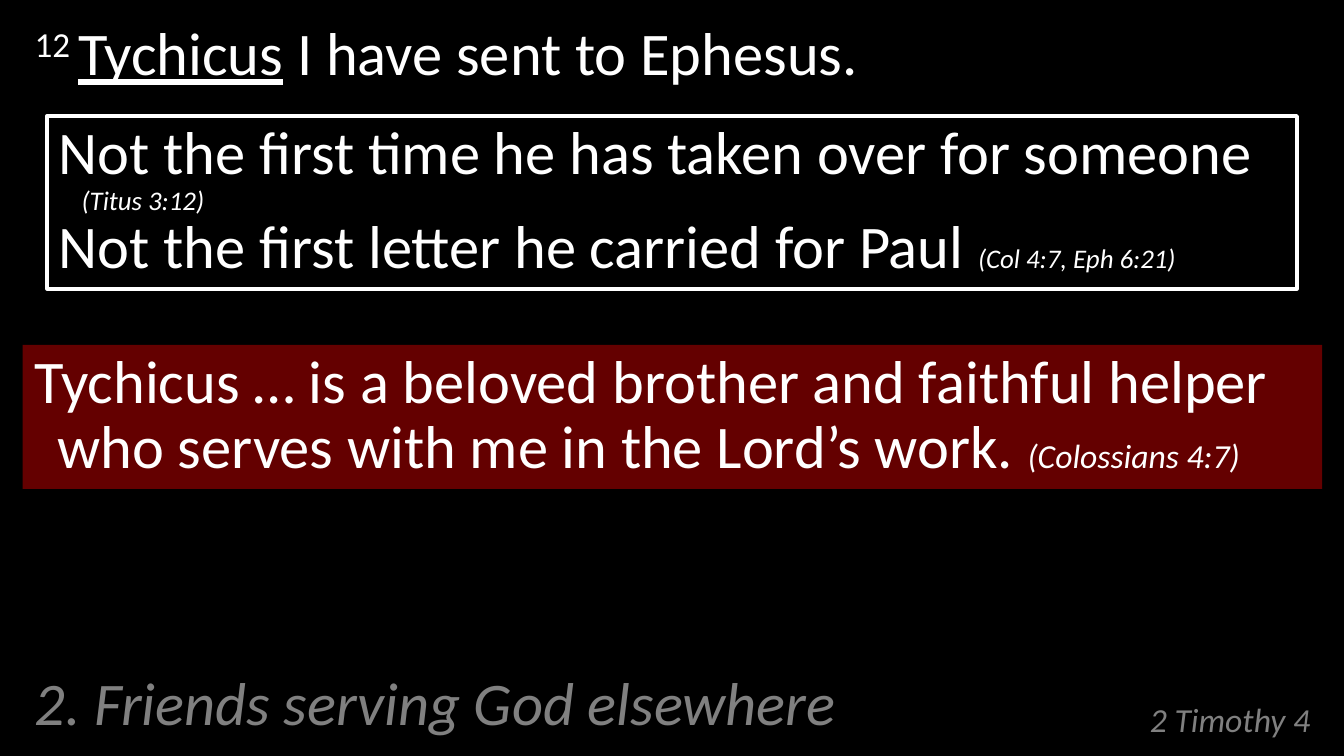
from pptx import Presentation
from pptx.dml.color import RGBColor
from pptx.enum.shapes import MSO_SHAPE
from pptx.enum.text import MSO_ANCHOR, MSO_AUTO_SIZE, PP_ALIGN
from pptx.util import Pt

ROUNDED = MSO_SHAPE.ROUNDED_RECTANGLE
TOP, BOTTOM = MSO_ANCHOR.TOP, MSO_ANCHOR.BOTTOM
LEFT, RIGHT = PP_ALIGN.LEFT, PP_ALIGN.RIGHT
GROW = MSO_AUTO_SIZE.SHAPE_TO_FIT_TEXT
COLORS = {"black": "000000", "white": "FFFFFF", "gray": "808080", "maroon": "640000"}


def rgb(name):
    return RGBColor.from_string(COLORS[name])


def write(p, parts, color, spacing, indent=0, align=LEFT):
    p.alignment = align
    p.line_spacing = spacing
    pPr = p._p.get_or_add_pPr()
    pPr.set("marL", str(Pt(indent)))
    pPr.set("indent", str(Pt(-indent)))
    p.text = parts[0][0]
    for text, size, style in parts[1:]:
        p.add_run().text = text
    sizes = [(size, style) for text, size, style in parts for line in text.split("\v")]
    for r, (size, style) in zip(p.runs, sizes):
        r.font.name = "Calibri"
        r.font.size = Pt(size)
        r.font.color.rgb = rgb(color)
        r.font.italic = style == "italic"
        r.font.underline = style == "underline"
        if style == "super":
            r._r.get_or_add_rPr().set("baseline", "30000")


prs = Presentation()
prs.slide_width, prs.slide_height = Pt(800), Pt(450)
s = prs.slides.add_slide(prs.slide_layouts[6])
s.background.fill.solid()
s.background.fill.fore_color.rgb = rgb("black")

verse = [("12 ", 36, "super"), ("Tychicus", 36, "underline"),
         (" I have sent to Ephesus.", 36, "")]
heading = [("2. Friends serving God elsewhere", 36, "italic")]
chapter = [("2 Timothy 4", 20, "italic")]
labels = [
    (508.5, 400.5, 278.5, 43, BOTTOM, chapter, "gray", 0.8, 0, RIGHT),
    (13.5, 8.75, 773.5, 381, TOP, verse, "white", 0.95, 27, LEFT),
    (13.5, 400.5, 584.5, 43, BOTTOM, heading, "gray", 0.95, 27, LEFT),
]
for x, y, w, h, anchor, parts, color, spacing, indent, align in labels:
    tf = s.shapes.add_textbox(Pt(x), Pt(y), Pt(w), Pt(h)).text_frame
    tf.word_wrap = True
    tf.vertical_anchor = anchor
    write(tf.paragraphs[0], parts, color, spacing, indent, align)

quote = [
    [("Tychicus … is a beloved brother and faithful helper \vwho serves with me in the Lord’s work. ", 36, ""),
     ("(Colossians 4:7)", 20, "italic")],
]
notes = [
    [("Not the first time he has taken over for someone ", 36, ""),
     ("(Titus 3:12)", 16, "italic")],
    [("Not the first letter he carried for Paul ", 36, ""),
     ("(Col 4:7, Eph 6:21)", 16, "italic")],
]
panels = [
    (13.5, 205.25, 773.5, 85.75, "maroon", None, quote),
    (28, 69, 744, 103, "black", "white", notes),
]
for x, y, w, h, fill, line, paragraphs in panels:
    sp = s.shapes.add_shape(ROUNDED, Pt(x), Pt(y), Pt(w), Pt(h))
    sp.adjustments[0] = 0
    sp.shadow.inherit = False
    sp.fill.solid()
    sp.fill.fore_color.rgb = rgb(fill)
    if line:
        sp.line.color.rgb = rgb(line)
        sp.line.width = Pt(2)
    else:
        sp.line.fill.background()
    tf = sp.text_frame
    tf.word_wrap = True
    tf.auto_size = GROW
    tf.vertical_anchor = TOP
    for i, parts in enumerate(paragraphs):
        p = tf.add_paragraph() if i else tf.paragraphs[0]
        write(p, parts, "white", 0.9, 13.5)

prs.save("out.pptx")
